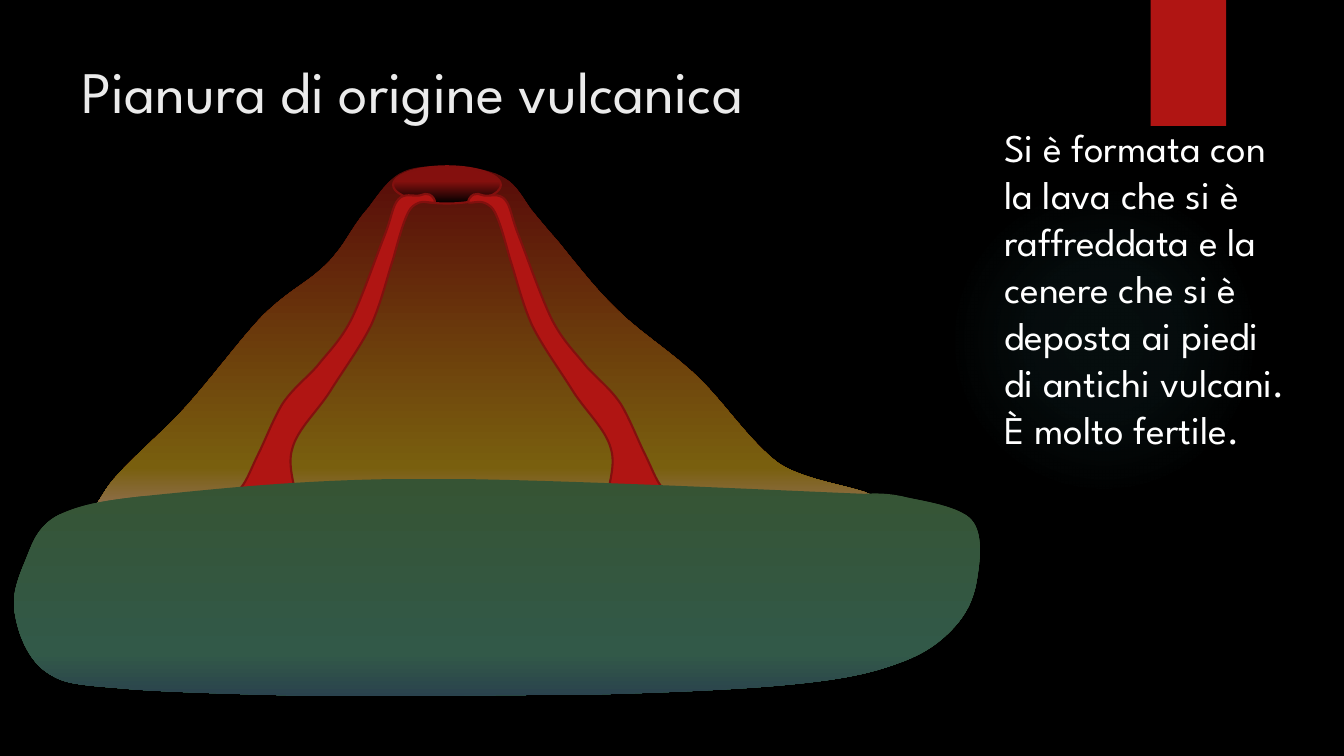
from lxml.etree import SubElement
from pptx import Presentation
from pptx.dml.color import RGBColor
from pptx.enum.shapes import MSO_SHAPE
from pptx.enum.text import MSO_ANCHOR, MSO_AUTO_SIZE
from pptx.oxml.ns import qn
from pptx.util import Pt

BLACK = RGBColor(0x00, 0x00, 0x00)
WHITE = RGBColor(0xFF, 0xFF, 0xFF)
TITLE_GREY = RGBColor(0xEB, 0xEB, 0xEB)
LAVA_RED = RGBColor(0xB0, 0x15, 0x13)
LAVA_EDGE = RGBColor(0x82, 0x10, 0x0E)
CRATER_RED = RGBColor(0x84, 0x10, 0x0E)
GLOW = RGBColor(0x50, 0xB9, 0xC1)

FONT = "League Spartan"
TITLE = ["Pianura di origine vulcanica"]
DESCRIPTION = [
    "Si è formata con la lava che si è raffreddata e la cenere che si è deposta ai piedi di antichi vulcani.",
    "È molto fertile.",
]

GLOW_STOPS = [(0, GLOW, 7), (36, GLOW, 6), (69, GLOW, 0)]
CONE_STOPS = [
    (0, RGBColor(0x58, 0x0A, 0x09), 100),
    (78, RGBColor(0x79, 0x5F, 0x0E), 100),
    (89, RGBColor(0x90, 0x70, 0x52), 100),
    (100, RGBColor(0x65, 0x4F, 0x31), 100),
]
CRATER_STOPS = [(0, CRATER_RED, 100), (40, CRATER_RED, 100), (100, BLACK, 100)]
PLAIN_STOPS = [
    (0, RGBColor(0x36, 0x54, 0x34), 100),
    (80, RGBColor(0x32, 0x59, 0x48), 100),
    (100, RGBColor(0x2A, 0x42, 0x4D), 100),
]

DRAWING_UNIT = Pt(0.72)
MIRROR_SUM = 896
CONE_BOUNDS = (83, 165, 784, 383)
LEFT_LAVA_BOUNDS = (159, 192, 272, 360)
RIGHT_LAVA_BOUNDS = (465, 192, 272, 360)
PLAIN_BOUNDS = (14, 475, 958, 216)

CONE = [
    (105, 486),
    (120, 463, 159, 432, 185, 403), (211, 374, 239, 336, 260, 314),
    (282, 292, 301, 282, 314, 271), (327, 260, 328, 258, 337, 247),
    (345, 236, 354, 219, 365, 207), (375, 194, 385, 177, 401, 170),
    (416, 163, 442, 165, 459, 166), (476, 167, 490, 170, 501, 177),
    (513, 184, 519, 197, 527, 208), (536, 219, 540, 224, 554, 240),
    (568, 257, 589, 285, 612, 307), (634, 329, 663, 347, 690, 372),
    (717, 397, 744, 439, 773, 460), (803, 480, 869, 485, 867, 495),
    (864, 504, 821, 510, 757, 516), (692, 522, 480, 531, 480, 531),
    (293, 542),
    (229, 544, 128, 554, 97, 544), (67, 534, 91, 510, 105, 486),
]
LEFT_LAVA = [
    (416, 194),
    (410, 195, 401, 191, 395, 198), (389, 205, 389, 215, 381, 235),
    (373, 255, 359, 296, 348, 318), (337, 339, 325, 350, 314, 364),
    (302, 377, 290, 386, 280, 401), (271, 416, 263, 437, 256, 451),
    (249, 465, 246, 475, 239, 484), (231, 494, 222, 502, 214, 509),
    (205, 516, 198, 520, 189, 526), (180, 532, 160, 539, 159, 543),
    (159, 546, 173, 547, 184, 548), (196, 549, 214, 549, 230, 549),
    (247, 549, 273, 557, 283, 549), (294, 541, 293, 520, 294, 503),
    (295, 486, 284, 464, 290, 445), (295, 426, 314, 409, 327, 389),
    (340, 368, 357, 345, 368, 323), (378, 301, 384, 275, 390, 257),
    (395, 239, 399, 224, 403, 215), (407, 205, 411, 203, 416, 201),
    (420, 199, 430, 202, 431, 201), (433, 200, 429, 194, 426, 193),
    (423, 191, 421, 193, 416, 194),
]
PLAIN = [
    (165, 490),
    (103, 496, 82, 500, 58, 511), (35, 523, 31, 543, 24, 559),
    (17, 576, 11, 593, 15, 610), (18, 628, 27, 653, 45, 666),
    (62, 678, 72, 679, 121, 683), (170, 688, 340, 691, 340, 691),
    (590, 689),
    (664, 687, 735, 684, 785, 679), (836, 674, 864, 668, 891, 658),
    (917, 649, 933, 637, 946, 623), (959, 609, 966, 594, 969, 576),
    (972, 558, 976, 530, 964, 516), (952, 502, 914, 497, 897, 493),
    (879, 488, 858, 490, 858, 490), (780, 487, 541, 475, 425, 475),
    (309, 475, 226, 484, 165, 490),
]


def set_gradient(shape, stops, radial=False):
    shape.fill.background()
    empty_fill = shape._element.spPr.find(qn("a:noFill"))
    gradient = empty_fill.makeelement(qn("a:gradFill"), {"rotWithShape": "1"})
    stop_list = SubElement(gradient, qn("a:gsLst"))
    for position, color, opacity in stops:
        stop = SubElement(stop_list, qn("a:gs"), pos=str(position * 1000))
        color_element = SubElement(stop, qn("a:srgbClr"), val=str(color))
        if opacity < 100:
            SubElement(color_element, qn("a:alpha"), val=str(opacity * 1000))
    if radial:
        circle = SubElement(gradient, qn("a:path"), path="circle")
        SubElement(circle, qn("a:fillToRect"), l="50000", t="50000", r="50000", b="50000")
    else:
        SubElement(gradient, qn("a:lin"), ang="5400000", scaled="0")
    empty_fill.getparent().replace(empty_fill, gradient)


def set_paint(shape, paint, edge=None, radial=False):
    shape.shadow.inherit = False
    if isinstance(paint, RGBColor):
        shape.fill.solid()
        shape.fill.fore_color.rgb = paint
    else:
        set_gradient(shape, paint, radial)
    if edge is None:
        shape.line.fill.background()
    else:
        shape.line.color.rgb = edge
        shape.line.width = Pt(1.5)


def add_preset(slide, kind, bounds, paint, edge=None, radial=False):
    shape = slide.shapes.add_shape(kind, *map(Pt, bounds))
    set_paint(shape, paint, edge, radial)


def add_outline(slide, outline, bounds, paint, edge=None):
    anchors = [segment[-2:] for segment in outline]
    builder = slide.shapes.build_freeform(*anchors[0], scale=DRAWING_UNIT)
    builder.add_line_segments(anchors[1:], close=True)
    shape = builder.convert_to_shape()
    left, top, width, height = bounds
    shape.left, shape.top, shape.width, shape.height = (DRAWING_UNIT * value for value in bounds)
    curve = shape._element.spPr.find(".//" + qn("a:path"))
    curve.set("w", str(width))
    curve.set("h", str(height))
    for child in list(curve):
        curve.remove(child)
    for index, segment in enumerate(outline):
        tag = "a:cubicBezTo" if len(segment) == 6 else "a:lnTo" if index else "a:moveTo"
        command = SubElement(curve, qn(tag))
        for x, y in zip(segment[::2], segment[1::2]):
            SubElement(command, qn("a:pt"), x=str(x - left), y=str(y - top))
    SubElement(curve, qn("a:close"))
    set_paint(shape, paint, edge)


def mirror(outline):
    return [
        tuple(value if index % 2 else MIRROR_SUM - value for index, value in enumerate(segment))
        for segment in outline
    ]


def add_text(slide, bounds, lines, size, color, auto_size=MSO_AUTO_SIZE.NONE):
    text_frame = slide.shapes.add_textbox(*map(Pt, bounds)).text_frame
    text_frame.word_wrap = True
    text_frame.auto_size = auto_size
    text_frame.vertical_anchor = MSO_ANCHOR.TOP
    text_frame.text = "\n".join(lines)
    for paragraph in text_frame.paragraphs:
        for run in paragraph.runs:
            run.font.name = FONT
            run.font.size = Pt(size)
            run.font.color.rgb = color


def main():
    presentation = Presentation()
    presentation.slide_width = Pt(960)
    presentation.slide_height = Pt(540)
    slide = presentation.slides.add_slide(presentation.slide_layouts[6])
    slide.background.fill.solid()
    slide.background.fill.fore_color.rgb = BLACK

    add_preset(slide, MSO_SHAPE.OVAL, (677.5, 131.75, 221.75, 221.75), GLOW_STOPS, radial=True)
    add_preset(slide, MSO_SHAPE.RECTANGLE, (821.9, 0, 54, 90), LAVA_RED)
    add_text(slide, (51, 35.6, 741, 110), TITLE, 42, TITLE_GREY)
    add_text(slide, (710.3, 84.6, 219.6, 312.5), DESCRIPTION, 28, WHITE,
             MSO_AUTO_SIZE.SHAPE_TO_FIT_TEXT)

    add_outline(slide, CONE, CONE_BOUNDS, CONE_STOPS)
    add_preset(slide, MSO_SHAPE.OVAL, (280.8, 118.8, 77, 26.6), CRATER_STOPS, LAVA_EDGE)
    add_outline(slide, LEFT_LAVA, LEFT_LAVA_BOUNDS, LAVA_RED, LAVA_EDGE)
    add_outline(slide, mirror(LEFT_LAVA), RIGHT_LAVA_BOUNDS, LAVA_RED, LAVA_EDGE)
    add_outline(slide, PLAIN, PLAIN_BOUNDS, PLAIN_STOPS)

    presentation.save("out.pptx")


if __name__ == "__main__":
    main()
